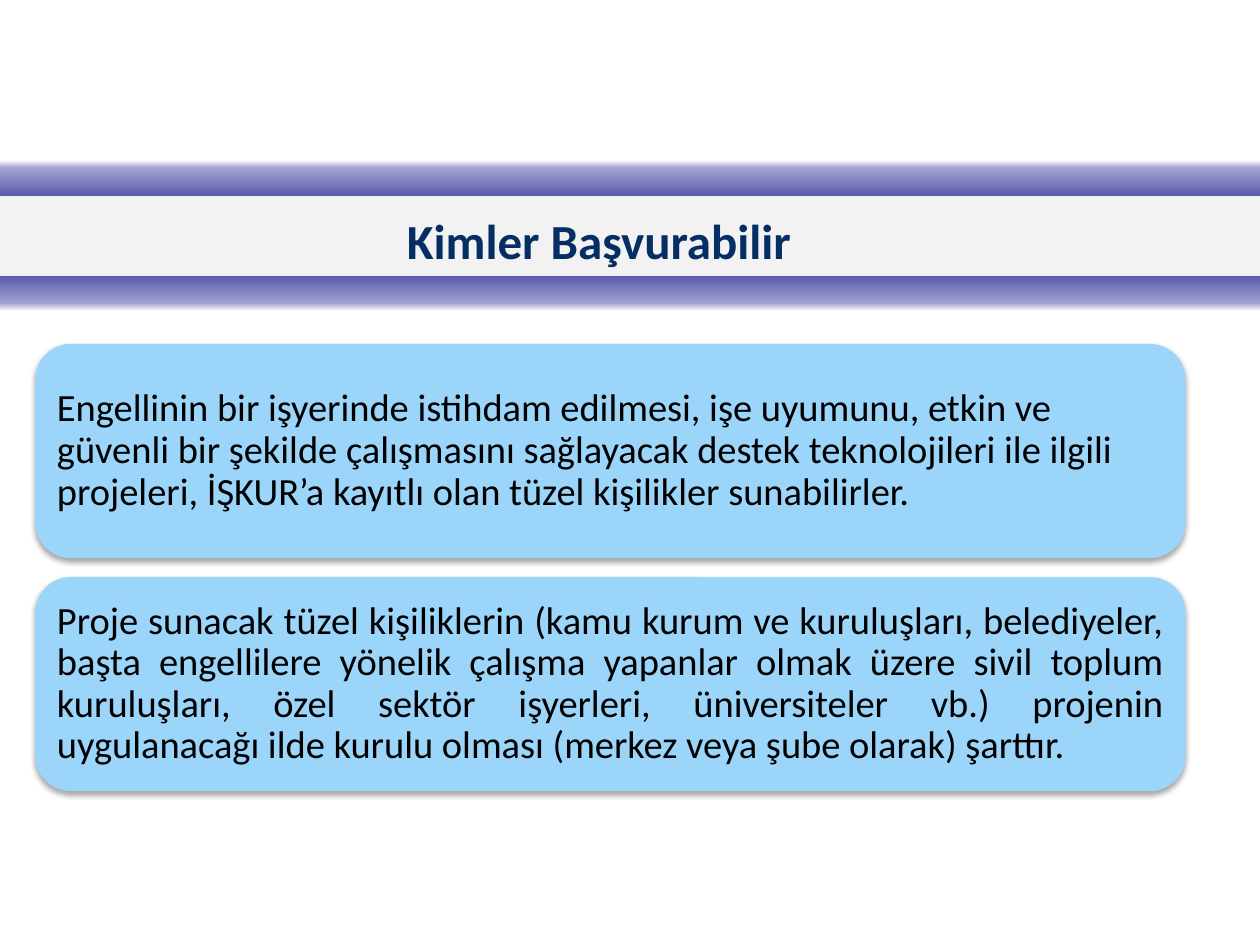
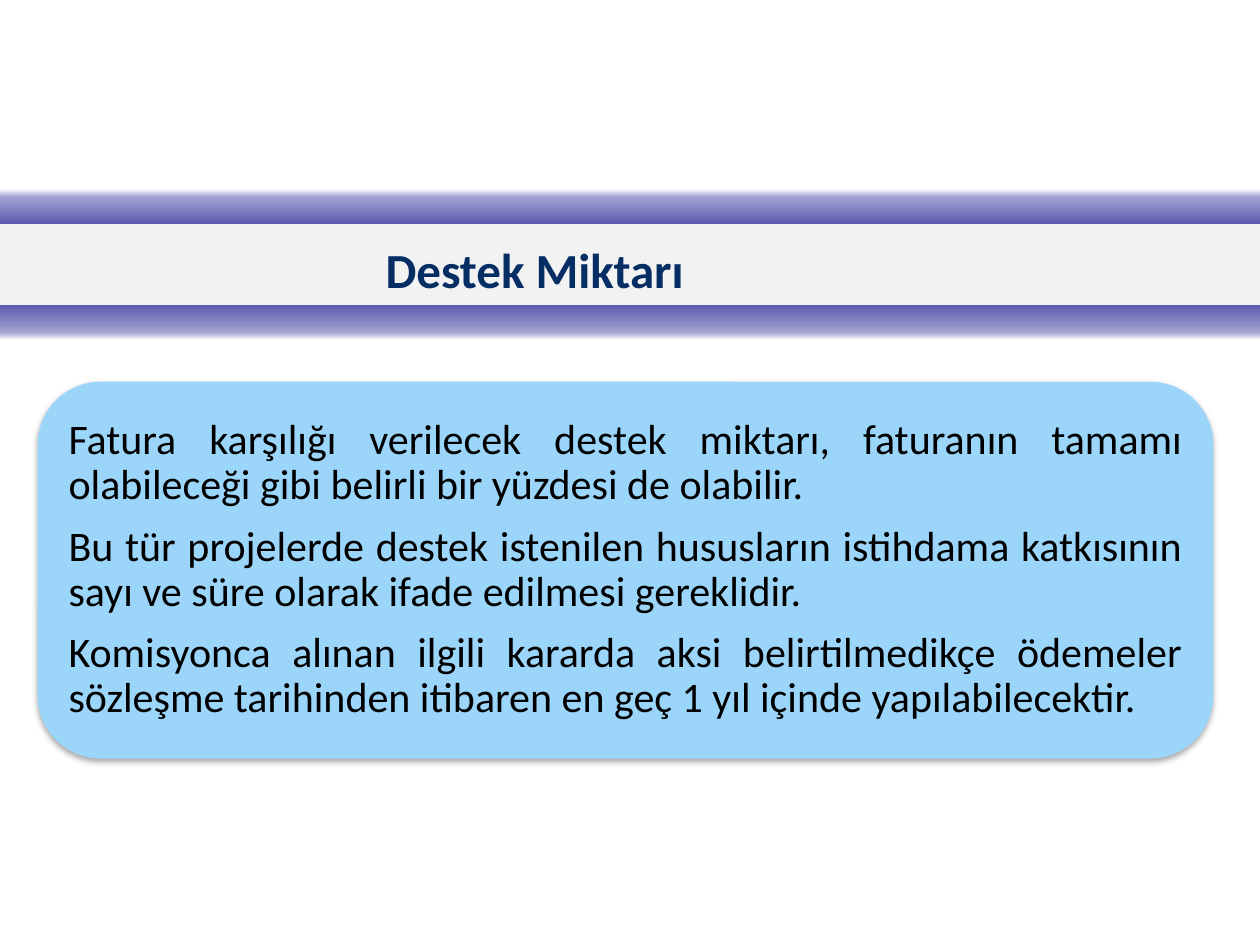
from dataclasses import dataclass

from pptx import Presentation
from pptx.dml.color import RGBColor as RGB
from pptx.enum.shapes import MSO_SHAPE as Shape
from pptx.enum.text import MSO_ANCHOR as Anchor, MSO_AUTO_SIZE as AutoSize, PP_ALIGN as Align
from pptx.oxml import parse_xml
from pptx.oxml.ns import nsdecls, qn
from pptx.util import Inches, Pt

COLORS = {
    "band": "F2F2F2",
    "title": "052E65",
    "card": "9BD5FA",
    "text": "000000",
    "fade_dark": "5B5BAE",
    "fade_mid": "A3A3D3",
    "fade_light": "FFFFFF",
    "shadow": "000000",
}
FONT = "Calibri"
SLIDE_W, SLIDE_H = 10, 7.5
BAND_H, FADE_H = 0.64, 0.28
TITLE_ONLY = 5


@dataclass
class Card:
    paragraphs: list[str]
    align: Align = Align.JUSTIFY


@dataclass
class Page:
    title: str
    band_top: float
    title_left: float
    cards: list[Card]
    # Column of cards: place of the first one, and the gap between them
    left: float
    top: float
    width: float
    card_h: float
    gap: float
    inset: float
    size: int


PAGES = [
    Page("Kimler Başvurabilir", 1.55, 3.23, [
        Card(["Engellinin bir işyerinde istihdam edilmesi, işe uyumunu, etkin ve güvenli bir "
              "şekilde çalışmasını sağlayacak destek teknolojileri ile ilgili projeleri, "
              "İŞKUR’a kayıtlı olan tüzel kişilikler sunabilirler."], Align.LEFT),
        Card(["Proje sunacak tüzel kişiliklerin (kamu kurum ve kuruluşları, belediyeler, başta "
              "engellilere yönelik çalışma yapanlar olmak üzere sivil toplum kuruluşları, özel "
              "sektör işyerleri, üniversiteler vb.) projenin uygulanacağı ilde kurulu olması "
              "(merkez veya şube olarak) şarttır."]),
    ], left=0.28, top=2.73, width=9.13, card_h=1.7, gap=0.15, inset=0.09, size=22),
    Page("Destek Miktarı", 1.78, 3.06, [
        Card(["Fatura karşılığı verilecek destek miktarı, faturanın tamamı olabileceği gibi "
              "belirli bir yüzdesi de olabilir.",
              "Bu tür projelerde destek istenilen hususların istihdama katkısının sayı ve süre "
              "olarak ifade edilmesi gereklidir.",
              "Komisyonca alınan ilgili kararda aksi belirtilmedikçe ödemeler sözleşme "
              "tarihinden itibaren en geç 1 yıl içinde yapılabilecektir."]),
    ], left=0.3, top=3.03, width=9.33, card_h=2.99, gap=0, inset=0.1, size=24),
]


def color(name: str) -> RGB:
    return RGB.from_string(COLORS[name])


def add_box(slide, kind: Shape, left: float, top: float, width: float, height: float):
    sp = slide.shapes.add_shape(kind, Inches(left), Inches(top), Inches(width), Inches(height))
    sp.shadow.inherit = False
    sp.line.fill.background()
    return sp


def style_font(p, size: int, name: str, bold: bool = False) -> None:
    for r in p.runs:
        r.font.name, r.font.size, r.font.bold = FONT, Pt(size), bold
        r.font.color.rgb = color(name)


def add_fade(slide, top: float, degrees: int) -> None:
    """Strip that runs from light to dark in the given direction."""
    sp = add_box(slide, Shape.RECTANGLE, 0, top, SLIDE_W, FADE_H)
    sp.fill.background()
    stops = "".join(
        f'<a:gs pos="{pos * 1000}"><a:srgbClr val="{COLORS[name]}"/></a:gs>'
        for pos, name in ((0, "fade_light"), (22, "fade_mid"), (100, "fade_dark")))
    grad = parse_xml(f'<a:gradFill {nsdecls("a")}><a:gsLst>{stops}</a:gsLst>'
                     f'<a:lin ang="{degrees * 60000}" scaled="0"/></a:gradFill>')
    spPr = sp._element.spPr
    spPr.replace(spPr.find(qn("a:noFill")), grad)


def add_title(slide, page: Page) -> None:
    """Title band with a fading strip above and below."""
    add_fade(slide, page.band_top - FADE_H, 90)
    add_fade(slide, page.band_top + BAND_H, 270)
    sp = slide.shapes.title
    sp.left, sp.top = 0, Inches(page.band_top)
    sp.width, sp.height = Inches(SLIDE_W), Inches(BAND_H)
    sp.fill.solid()
    sp.fill.fore_color.rgb = color("band")
    tf = sp.text_frame
    tf.text = page.title
    tf.auto_size, tf.vertical_anchor = AutoSize.NONE, Anchor.TOP
    tf.margin_left = Inches(page.title_left)
    p = tf.paragraphs[0]
    p.alignment, p.line_spacing = Align.LEFT, 1.15
    style_font(p, 28, "title", bold=True)


def add_card(slide, page: Page, card: Card, row: int) -> None:
    top = page.top + row * (page.card_h + page.gap)
    sp = add_box(slide, Shape.ROUNDED_RECTANGLE, page.left, top, page.width, page.card_h)
    sp.fill.solid()
    sp.fill.fore_color.rgb = color("card")
    # Soft shadow below the card
    sp._element.spPr.find(qn("a:effectLst")).append(parse_xml(
        f'<a:outerShdw {nsdecls("a")} blurRad="{Pt(3.1)}" dist="{Pt(1.8)}" dir="5400000" '
        f'rotWithShape="0"><a:srgbClr val="{COLORS["shadow"]}"><a:alpha val="35000"/>'
        '</a:srgbClr></a:outerShdw>'))
    tf = sp.text_frame
    tf.word_wrap, tf.vertical_anchor = True, Anchor.MIDDLE
    tf.margin_left = tf.margin_right = tf.margin_top = tf.margin_bottom = Inches(page.inset)
    tf.text = "\n".join(card.paragraphs)
    for p in tf.paragraphs:
        p.alignment, p.line_spacing = card.align, 0.9
        p.space_after = Pt(round(0.37 * page.size))
        style_font(p, page.size, "text")


def main() -> None:
    prs = Presentation()
    prs.slide_width, prs.slide_height = Inches(SLIDE_W), Inches(SLIDE_H)
    for page in PAGES:
        slide = prs.slides.add_slide(prs.slide_layouts[TITLE_ONLY])
        add_title(slide, page)
        for row, card in enumerate(page.cards):
            add_card(slide, page, card, row)
    prs.save("out.pptx")


if __name__ == "__main__":
    main()
